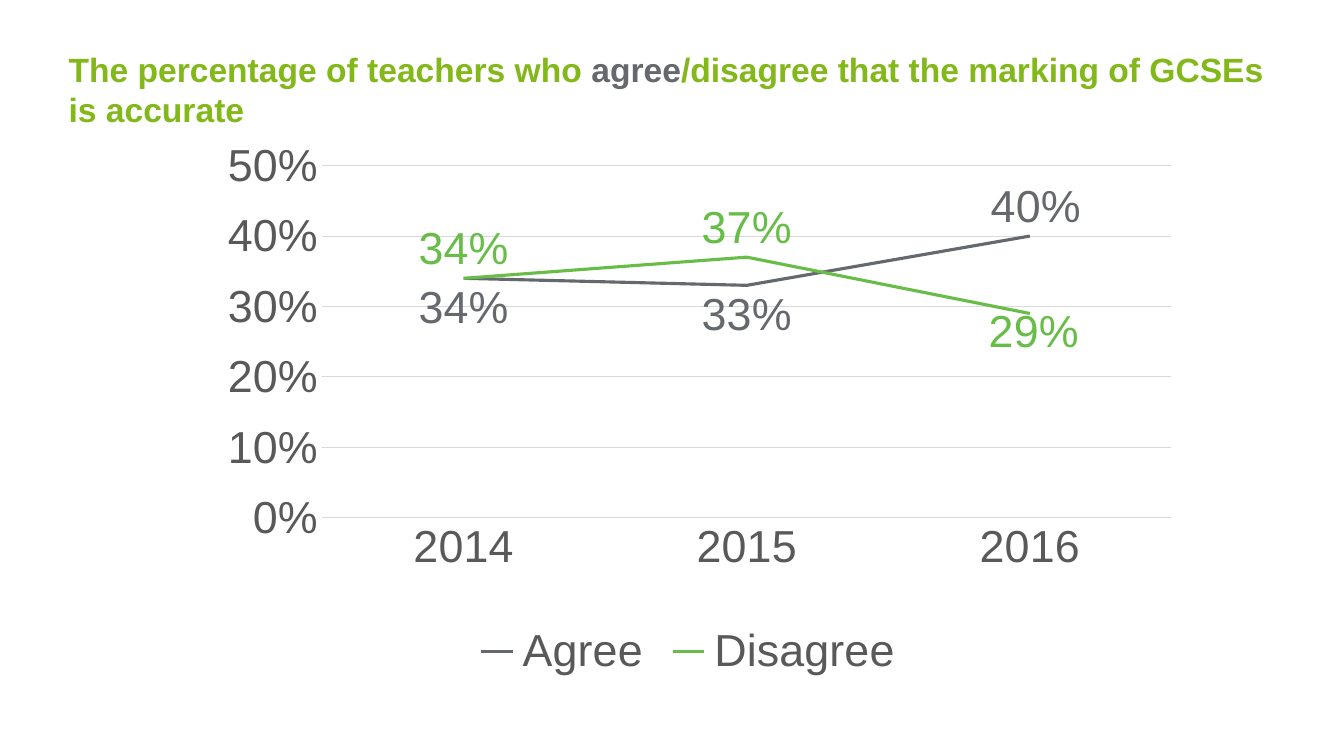
from lxml import etree
from pptx import Presentation
from pptx import util as u
from pptx.chart import data as chart_data
from pptx.dml.color import RGBColor
from pptx.enum import chart as ec
from pptx.enum import text
from pptx.oxml import ns

COLORS = {"lime": "83B81A", "agree": "65696E", "disagree": "68BD49",
          "label": "595959", "grid": "D9D9D9"}
ABOVE = ec.XL_LABEL_POSITION.ABOVE
BELOW = ec.XL_LABEL_POSITION.BELOW


class SlideWriter:
    face = "Arial"
    chart_size = 32
    title_size = 24

    def __init__(self, page):
        self.page = page

    def apply(self, target, values):
        for name, value in values.items():
            setattr(target, name, value)

    def color(self, name):
        return RGBColor.from_string(COLORS[name])

    def font(self, font, color, size, bold=False):
        self.apply(font, {"name": self.face, "size": u.Pt(size), "bold": bold})
        font.color.rgb = self.color(color)

    def line(self, line, color, width):
        line.color.rgb = self.color(color)
        line.width = u.Pt(width)

    def title(self, bounds, lines):
        box = self.page.shapes.add_textbox(*map(u.Pt, bounds))
        self.apply(box.text_frame, {
            "word_wrap": True, "vertical_anchor": text.MSO_ANCHOR.TOP,
            "margin_left": 0, "margin_right": 0,
            "margin_top": u.Pt(3), "margin_bottom": u.Pt(3)})
        para = box.text_frame.paragraphs[0]
        for index, spans in enumerate(lines):
            if index:
                para.add_line_break()
            for words, color in spans:
                span = para.add_run()
                span.text = words
                self.font(span.font, color, self.title_size, True)

    def layout(self, parent, position, **values):
        for old in parent.findall(ns.qn("c:layout")):
            parent.remove(old)
        layout = etree.Element(ns.qn("c:layout"))
        manual = etree.SubElement(layout, ns.qn("c:manualLayout"))
        for name, value in values.items():
            etree.SubElement(manual, ns.qn(f"c:{name}")).set("val", str(value))
        parent.insert(position, layout)

    def axes(self, chart):
        category, value = chart.category_axis, chart.value_axis
        for axis in (category, value):
            self.apply(axis, {"major_tick_mark": ec.XL_TICK_MARK.NONE,
                              "minor_tick_mark": ec.XL_TICK_MARK.NONE})
            self.font(axis.tick_labels.font, "label", self.chart_size)
        self.line(category.format.line, "grid", 0.75)
        self.apply(value, {"minimum_scale": 0, "maximum_scale": 0.5,
                           "major_unit": 0.1, "has_major_gridlines": True})
        self.apply(value.tick_labels, {"number_format": "0%",
                                       "number_format_is_linked": False})
        value.format.line.fill.background()
        self.line(value.major_gridlines.format.line, "grid", 0.75)

    def series(self, series, color, position, last_position, shift):
        series.smooth = False
        series.marker.style = ec.XL_MARKER_STYLE.NONE
        self.line(series.format.line, color, 2.25)
        labels = series.data_labels
        self.apply(labels, {"show_value": True, "position": position,
                            "number_format": "0%",
                            "number_format_is_linked": False})
        self.font(labels.font, color, self.chart_size)
        last = len(series.values) - 1
        label = series.points[last].data_label
        label.position = last_position
        self.font(label.font, color, self.chart_size)
        self.layout(labels._element.find(ns.qn("c:dLbl")), 1,
                    x=shift[0], y=shift[1])

    def line_chart(self, bounds, years, rows):
        data = chart_data.CategoryChartData(number_format="0%")
        data.categories = years
        for name, values, *_ in rows:
            data.add_series(name, values)
        frame = self.page.shapes.add_chart(
            ec.XL_CHART_TYPE.LINE, *map(u.Pt, bounds), data)
        chart = frame.chart
        self.apply(chart, {"has_title": False, "has_legend": True})
        self.apply(chart.font, {"name": self.face, "size": u.Pt(10)})
        self.apply(chart.legend, {"position": ec.XL_LEGEND_POSITION.BOTTOM,
                                  "include_in_layout": False})
        self.font(chart.legend.font, "label", self.chart_size)
        self.axes(chart)
        plot = chart.plots[0]
        plot.vary_by_categories = False
        for series, (_, _, *style) in zip(plot.series, rows):
            self.series(series, *style)
        area = chart._chartSpace.find(".//" + ns.qn("c:plotArea"))
        self.layout(area, 0, layoutTarget="inner", xMode="edge", yMode="edge",
                    x=0.136, y=0.047, w=0.845, h=0.646)


def main():
    deck = Presentation()
    deck.slide_width, deck.slide_height = u.Pt(960), u.Pt(540)
    writer = SlideWriter(deck.slides.add_slide(deck.slide_layouts[6]))
    writer.title((49, 31.7, 885, 51), [
        [("The percentage of teachers who ", "lime"), ("agree", "agree"),
         ("/disagree that the marking of GCSEs", "lime")],
        [("is accurate", "lime")]])
    writer.line_chart((132.5, 100, 718, 389.5), ["2014", "2015", "2016"], [
        ("Agree", (0.34, 0.33, 0.40), "agree", BELOW, ABOVE, (0.006, 0)),
        ("Disagree", (0.34, 0.37, 0.29), "disagree", ABOVE, BELOW,
         (0.004, -0.02))])
    deck.save("out.pptx")


if __name__ == "__main__":
    main()
